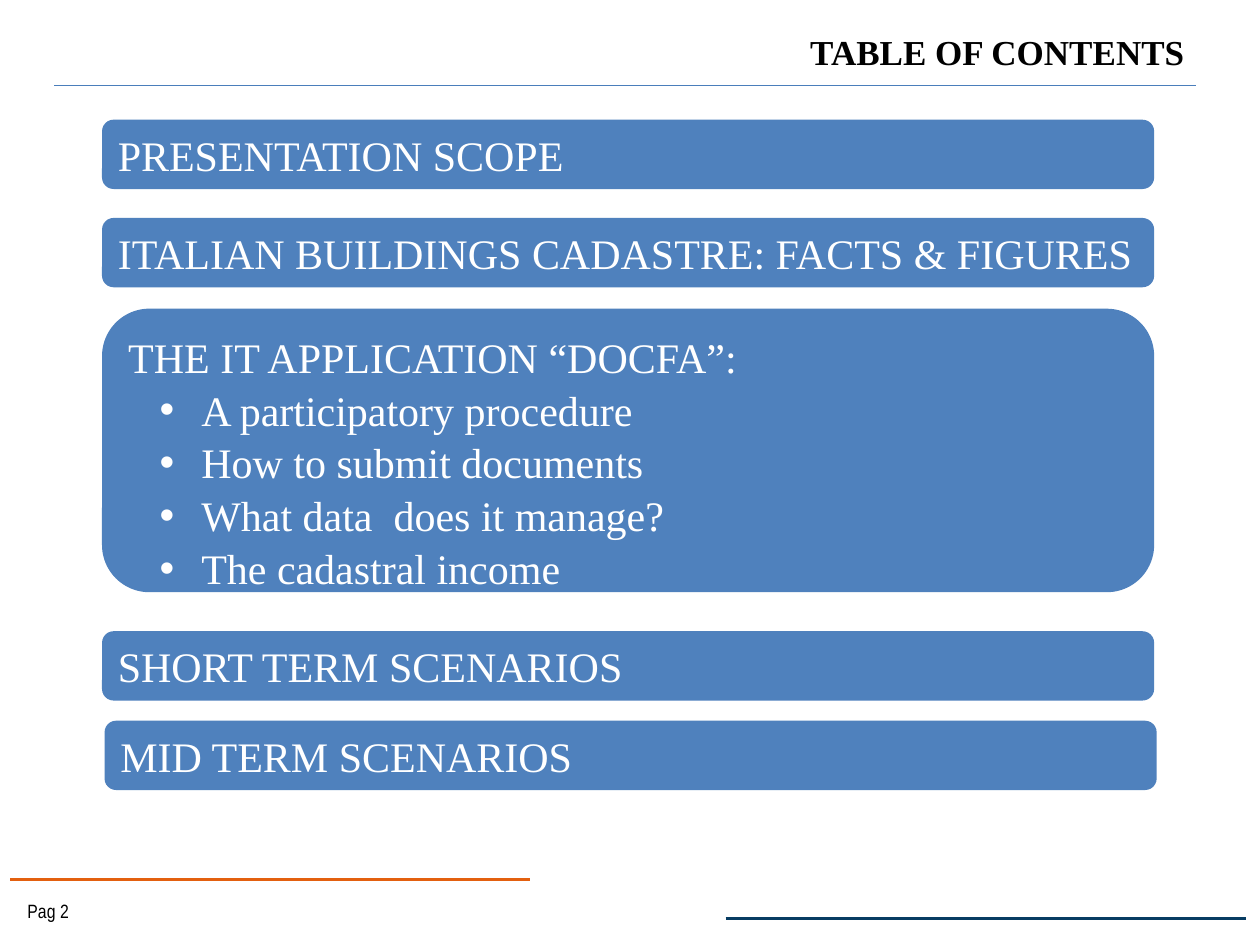
from lxml.etree import SubElement
from pptx import Presentation
from pptx.dml.color import RGBColor
from pptx.enum.shapes import MSO_CONNECTOR, MSO_SHAPE
from pptx.enum.text import MSO_ANCHOR, PP_ALIGN
from pptx.oxml.ns import qn
from pptx.util import Inches, Pt

COLORS = {"box": "4F81BD", "rule": "4A7EBB", "orange": "E3600F",
          "navy": "073C62", "white": "FFFFFF", "black": "000000"}
SERIF = "Times New Roman"


def write(p, text, size=24, font=SERIF, color="white", bold=False,
          align=PP_ALIGN.LEFT, spacing=1.0, bullet=False):
    p.text = text
    if bullet:
        pPr = p._p.get_or_add_pPr()
        pPr.set("marL", str(Inches(0.58)))
        pPr.set("indent", str(Inches(-0.33)))
        SubElement(pPr, qn("a:buFont")).set("typeface", "Arial")
        SubElement(pPr, qn("a:buChar")).set("char", "•")
    p.alignment = align
    p.line_spacing = spacing
    f = p.runs[0].font
    f.size, f.name, f.bold = Pt(size), font, bold
    f.color.rgb = RGBColor.from_string(COLORS[color])


prs = Presentation()
prs.slide_width, prs.slide_height = Inches(10), Inches(7.5)
s = prs.slides.add_slide(prs.slide_layouts[5])

# Header and footer rules
for x1, x2, y, color, width in [(0.43, 9.49, 0.68, "rule", 0.75),
                                (0.08, 4.21, 6.98, "orange", 2),
                                (5.76, 9.89, 7.29, "navy", 2)]:
    line = s.shapes.add_connector(MSO_CONNECTOR.STRAIGHT, Inches(x1), Inches(y),
                                  Inches(x2), Inches(y))
    line.line.color.rgb = RGBColor.from_string(COLORS[color])
    line.line.width = Pt(width)
    SubElement(line._element.spPr, qn("a:effectLst"))

# Page number
page = s.shapes.add_textbox(Inches(0.12), Inches(7.09), Inches(1.17), Inches(0.28))
page.text_frame.word_wrap = True
write(page.text_frame.paragraphs[0], "Pag 2", size=11, font="Arial Narrow", color="black")

# Contents boxes: left, top, height, lines (those after the first are bullets)
contents = [
    (0.81, 0.95, 0.55, ["PRESENTATION SCOPE"]),
    (0.81, 1.73, 0.55, ["ITALIAN BUILDINGS CADASTRE: FACTS & FIGURES"]),
    (0.81, 2.45, 2.25, ["THE IT APPLICATION “DOCFA”:",
                        "A participatory procedure",
                        "How to submit documents",
                        "What data  does it manage?",
                        "The cadastral income"]),
    (0.81, 5.01, 0.55, ["SHORT TERM SCENARIOS"]),
    (0.83, 5.72, 0.55, ["MID TERM SCENARIOS"]),
]
for left, top, height, lines in contents:
    sp = s.shapes.add_shape(MSO_SHAPE.ROUNDED_RECTANGLE, Inches(left), Inches(top),
                            Inches(8.35), Inches(height))
    sp.shadow.inherit = False
    sp.fill.solid()
    sp.fill.fore_color.rgb = RGBColor.from_string(COLORS["box"])
    sp.line.fill.background()
    tf = sp.text_frame
    tf.word_wrap = True
    has_list = len(lines) > 1
    tf.vertical_anchor = MSO_ANCHOR.TOP if has_list else MSO_ANCHOR.MIDDLE
    for i, text in enumerate(lines):
        p = tf.add_paragraph() if i else tf.paragraphs[0]
        write(p, text, bullet=i > 0, spacing=1.05 if has_list else 1.0)

# Title
title = s.shapes.title
title.left, title.top = Inches(1.07), Inches(0.13)
title.width, title.height = Inches(8.5), Inches(0.55)
title.text_frame.vertical_anchor = MSO_ANCHOR.MIDDLE
title.text_frame.margin_right = Inches(0.17)
write(title.text_frame.paragraphs[0], "TABLE OF CONTENTS", size=20, color="black",
      bold=True, align=PP_ALIGN.RIGHT)

prs.save("out.pptx")
